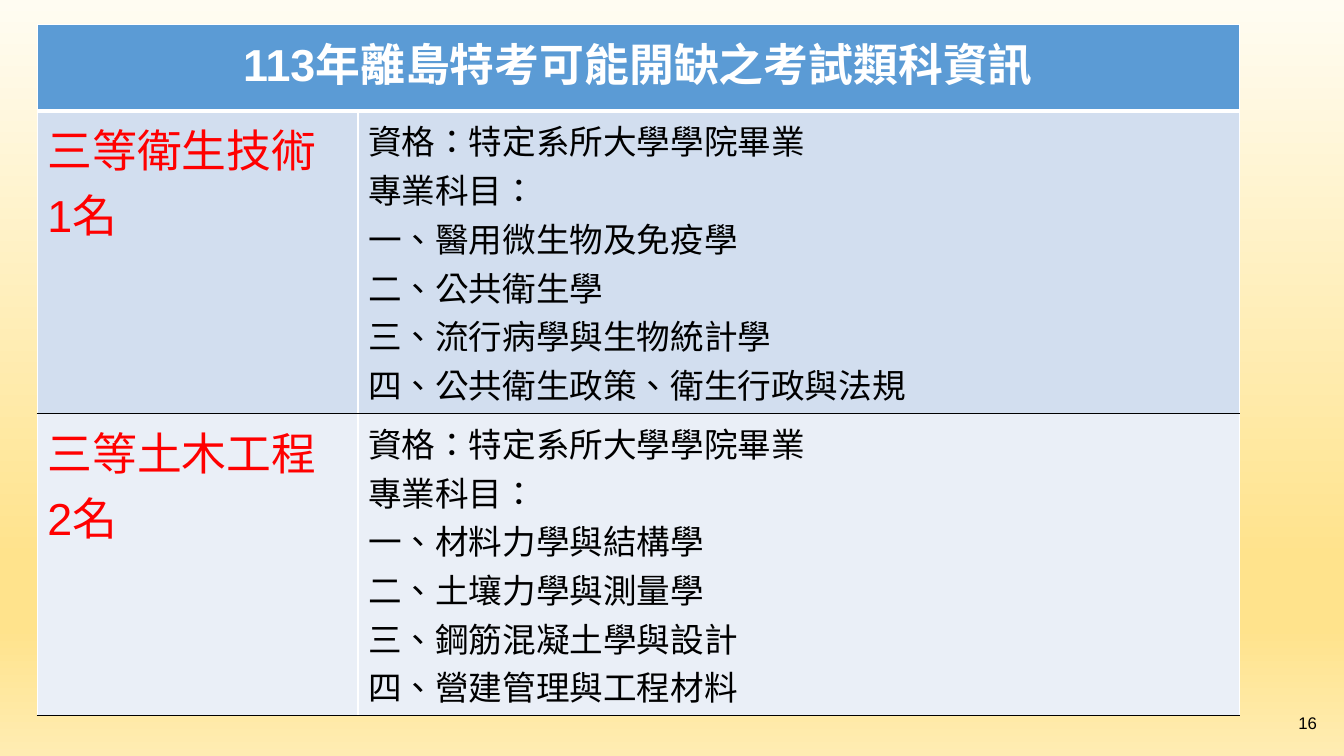
from lxml.etree import SubElement
from pptx import Presentation
from pptx.dml.color import RGBColor
from pptx.enum.lang import MSO_LANGUAGE_ID
from pptx.enum.text import MSO_ANCHOR, PP_ALIGN
from pptx.oxml.ns import qn
from pptx.util import Inches, Pt

HUES = {
    "white": "FFFFFF", "black": "000000", "red": "FF0000",
    "head": "5B9BD5", "odd": "D2DEEF", "even": "EAEFF7",
}
STOPS = {0: "FFFCF2", 74: "FFE38C", 83: "FFE38C", 100: "FFECB2"}
TITLE = "113年離島特考可能開缺之考試類科資訊"
NEEDS = ["資格：特定系所大學學院畢業", "專業科目："]
EXAMS = [
    (["三等衛生技術", "1名"],
     ["一、醫用微生物及免疫學", "二、公共衛生學",
      "三、流行病學與生物統計學", "四、公共衛生政策、衛生行政與法規"]),
    (["三等土木工程", "2名"],
     ["一、材料力學與結構學", "二、土壤力學與測量學",
      "三、鋼筋混凝土學與設計", "四、營建管理與工程材料"]),
]
COLS = [3.18, 8.74]
ROWS = [0.86, 3, 3]
THIN, THICK, DARK = ("white", 1), ("white", 3), ("black", 1)


def paint(slide):
    """Fill the slide background with the vertical gradient."""
    fill = slide.background.fill
    fill.gradient()
    fill.gradient_angle = 270
    stops = slide.element.find(".//" + qn("a:gsLst"))
    for stop in list(stops):
        stops.remove(stop)
    for place, hue in STOPS.items():
        stop = SubElement(stops, qn("a:gs"), pos=str(place * 1000))
        SubElement(stop, qn("a:srgbClr"), val=hue)


def write(frame, lines, size, hue, bold=False, align=PP_ALIGN.LEFT):
    """Write one paragraph per line in a single format."""
    looks = {"name": "Arial", "size": Pt(size), "bold": bold,
             "language_id": MSO_LANGUAGE_ID.TRADITIONAL_CHINESE}
    for i, line in enumerate(lines):
        para = frame.add_paragraph() if i else frame.paragraphs[0]
        para.alignment = align
        run = para.add_run()
        run.text = line
        for key, value in looks.items():
            setattr(run.font, key, value)
        run.font.color.rgb = RGBColor.from_string(HUES[hue])


def dress(cell, fill, top, base):
    """Give a cell its borders and fill."""
    props = cell._tc.get_or_add_tcPr()
    edges = {"lnL": THIN, "lnR": THIN, "lnT": top, "lnB": base}
    for tag, (hue, width) in edges.items():
        line = SubElement(props, qn("a:" + tag), w=str(Pt(width)))
        ink = SubElement(line, qn("a:solidFill"))
        SubElement(ink, qn("a:srgbClr"), val=HUES[hue])
    cell.fill.solid()
    cell.fill.fore_color.rgb = RGBColor.from_string(HUES[fill])


def add_exams(slide):
    """Add the table of exam posts and subjects."""
    table = slide.shapes.add_table(
        len(ROWS), len(COLS), Inches(0.37), Inches(0.24),
        Inches(sum(COLS)), Inches(sum(ROWS))).table
    for col, width in zip(table.columns, COLS):
        col.width = Inches(width)
    styles = [("head", THIN, THICK), ("odd", THICK, DARK), ("even", DARK, DARK)]
    for row, height, style in zip(table.rows, ROWS, styles):
        row.height = Inches(height)
        for cell in row.cells:
            dress(cell, *style)
    head = table.cell(0, 0)
    head.merge(table.cell(0, 1))
    write(head.text_frame, [TITLE], 32, "white", True, PP_ALIGN.CENTER)
    for i, (post, topics) in enumerate(EXAMS, 1):
        write(table.cell(i, 0).text_frame, post, 32, "red")
        write(table.cell(i, 1).text_frame, NEEDS + topics, 24, "black")


def add_page(slide, page):
    """Add the page number at the lower right."""
    box = slide.shapes.add_textbox(
        Inches(11.79), Inches(6.97), Inches(1.37), Inches(0.4))
    frame = box.text_frame
    frame.word_wrap = True
    frame.vertical_anchor = MSO_ANCHOR.MIDDLE
    write(frame, [page], 12, "black", align=PP_ALIGN.RIGHT)


def main():
    """Build and save the slide."""
    deck = Presentation()
    deck.slide_width, deck.slide_height = Inches(13.33), Inches(7.5)
    slide = deck.slides.add_slide(deck.slide_layouts[6])
    paint(slide)
    add_page(slide, "16")
    add_exams(slide)
    deck.save("out.pptx")


if __name__ == "__main__":
    main()
